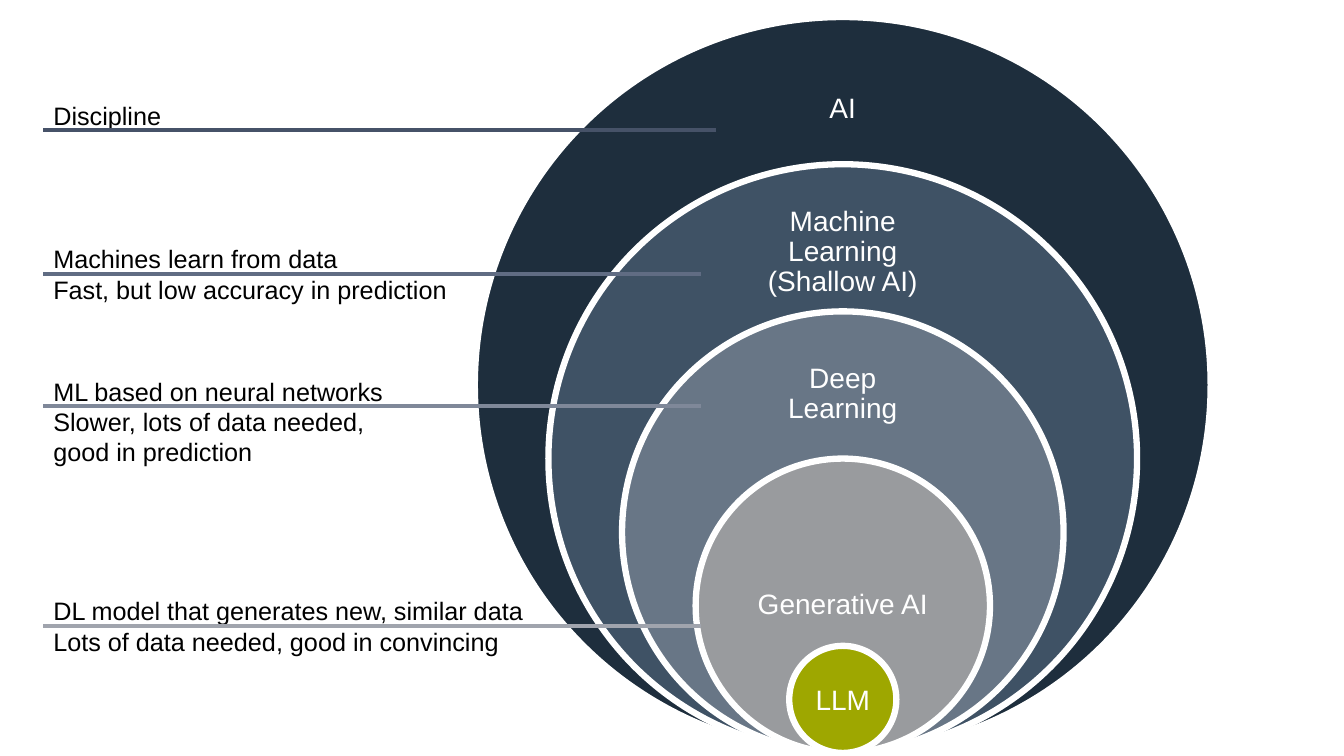
import dataclasses

import pptx
import pptx.dml.color
import pptx.enum.shapes
import pptx.enum.text
import pptx.oxml
import pptx.util

Pt = pptx.util.Pt
RGB = pptx.dml.color.RGBColor.from_string
Anchor = pptx.enum.text.MSO_ANCHOR
Align = pptx.enum.text.PP_ALIGN


@dataclasses.dataclass(frozen=True)
class Theme:
    """Colours, font and sizes of the slide."""
    font: str = "Arial"
    light: str = "FFFFFF"
    dark: str = "000000"
    ring: float = 20
    note: float = 18
    edge: float = 4.5
    rule: float = 3


THEME = Theme()

RINGS = [
    ("AI", "1E2E3D", 1, 0.05, 0.15),
    ("Machine Learning (Shallow AI)", "3F5265", 0.8, 0.06, 0.18),
    ("Deep Learning", "687686", 0.6, 0.075, 0.225),
    ("Generative AI", "999B9E", 0.4, 0.25, 0.5),
]

NOTES = [
    ("Discipline", "465268", 0, 29, 480.5),
    ("Machines learn from data\nFast, but low accuracy in prediction",
     "606C83", 102.5, 51, 469.5),
    ("ML based on neural networks\nSlower, lots of data needed,\vgood in prediction",
     "7F8899", 197, 73, 469.5),
    ("DL model that generates new, similar data\nLots of data needed, good in convincing",
     "A0A4AD", 354, 51, 469.5),
]


def style(frame, size, color, align):
    """Format every paragraph and run of a text frame."""
    for para in frame.paragraphs:
        para.alignment = align
        for run in para.runs:
            run.font.name = THEME.font
            run.font.size = Pt(size)
            run.font.color.rgb = RGB(color)


def disc(slide, box, fill):
    """Add a filled circle with a white edge."""
    oval = slide.shapes.add_shape(
        pptx.enum.shapes.MSO_SHAPE.OVAL, *map(Pt, box))
    oval.shadow.inherit = False
    oval.fill.solid()
    oval.fill.fore_color.rgb = RGB(fill)
    oval.line.color.rgb = RGB(THEME.light)
    oval.line.width = Pt(THEME.edge)
    return oval


def label(slide, box, text):
    """Add a centred ring label."""
    frame = slide.shapes.add_textbox(*map(Pt, box)).text_frame
    frame.word_wrap = True
    frame.vertical_anchor = Anchor.MIDDLE
    frame.margin_left = frame.margin_right = Pt(11.5)
    frame.margin_top = frame.margin_bottom = Pt(11.5)
    frame.text = text
    frame.paragraphs[0].line_spacing = 0.9
    style(frame, THEME.ring, THEME.light, Align.CENTER)


def rings(slide, left, top, side):
    """Nest the circles so that all touch the bottom of the square."""
    mid, base = left + side / 2, top + side
    wide, core = 149, 76.5
    for text, fill, ratio, drop, tall in RINGS:
        size = side * ratio
        head = base - size
        disc(slide, (mid - size / 2, head, size, size), fill)
        label(slide, (mid - wide / 2, head + size * drop, wide, size * tall), text)
    oval = disc(slide, (mid - core / 2, base - core, core, core), "9EA700")
    frame = oval.text_frame
    frame.vertical_anchor = Anchor.MIDDLE
    frame.text = "LLM"
    style(frame, THEME.ring, THEME.light, Align.CENTER)


def notes(slide, left, top, wide):
    """Place the notes, each with a rule under its first line."""
    for text, color, down, tall, span in NOTES:
        head = top + down
        area = slide.shapes.add_textbox(Pt(left), Pt(head), Pt(wide), Pt(tall))
        frame = area.text_frame
        frame.word_wrap = True
        frame.auto_size = pptx.enum.text.MSO_AUTO_SIZE.SHAPE_TO_FIT_TEXT
        frame.text = text
        style(frame, THEME.note, THEME.dark, Align.LEFT)
        rule = slide.shapes.add_connector(
            pptx.enum.shapes.MSO_CONNECTOR.STRAIGHT,
            Pt(left), Pt(head + 25), Pt(left + span), Pt(head + 25))
        rule.line.color.rgb = RGB(color)
        rule.line.width = Pt(THEME.rule)
        rule.element.spPr.append(pptx.oxml.parse_xml(
            '<a:effectLst xmlns:a='
            '"http://schemas.openxmlformats.org/drawingml/2006/main"/>'))


def main():
    """Build and save the slide."""
    deck = pptx.Presentation()
    deck.slide_width, deck.slide_height = Pt(960), Pt(540)
    slide = deck.slides.add_slide(deck.slide_layouts[6])
    rings(slide, 339.2, 12.2, 525.6)
    notes(slide, 31, 68, 481)
    deck.save("out.pptx")


if __name__ == "__main__":
    main()
